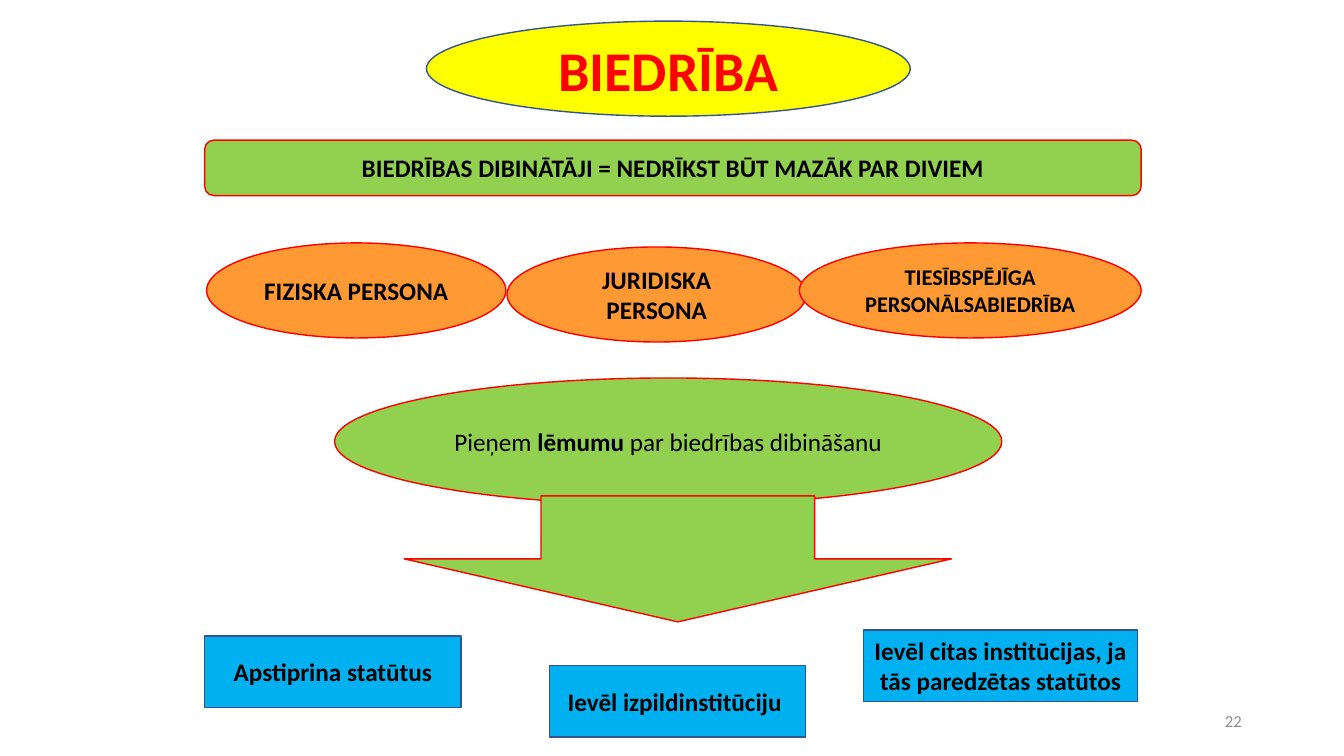
from lxml.etree import SubElement
from pptx import Presentation
from pptx.dml.color import RGBColor
from pptx.enum.shapes import MSO_SHAPE
from pptx.enum.text import MSO_ANCHOR, MSO_AUTO_SIZE, PP_ALIGN
from pptx.oxml.ns import qn
from pptx.util import Pt

YELLOW = RGBColor(0xFF, 0xFF, 0x00)
RED = RGBColor(0xFF, 0x00, 0x00)
GREEN = RGBColor(0x92, 0xD0, 0x50)
ORANGE = RGBColor(0xFF, 0x99, 0x33)
BLUE = RGBColor(0x00, 0xB0, 0xF0)
NAVY = RGBColor(0x32, 0x54, 0x91)
BLACK = RGBColor(0x00, 0x00, 0x00)
GRAY = RGBColor(0x8C, 0x8C, 0x8C)

FONT = "Calibri"
TITLE_BOX = (304.6, 15.1, 345.6, 67.9)
FOUNDERS = [
    ("FIZISKA PERSONA", (147.6, 173.5, 213.8, 67.9), 18),
    ("JURIDISKA PERSONA", (362.2, 176.4, 213.8, 67.9), 18),
    ("TIESĪBSPĒJĪGA PERSONĀLSABIEDRĪBA", (571, 173.5, 244.1, 67.9), 16),
]
NEXT_STEPS = [
    ("Apstiprina statūtus", (146.2, 454.2, 183.2, 51.1)),
    ("Ievēl izpildinstitūciju ", (392.4, 475.4, 183.2, 51.1)),
    ("Ievēl citas institūcijas, ja tās paredzētas statūtos", (617, 450, 195.4, 51.1)),
]


def format_font(font, size, color, bold):
    font.name = FONT
    font.size = Pt(size)
    font.color.rgb = color
    font.bold = bold


def write_centred(shape, parts, size, color=BLACK):
    """Fill the shape with one paragraph made of (text, bold) parts."""
    frame = shape.text_frame
    frame.word_wrap = True
    frame.auto_size = MSO_AUTO_SIZE.NONE
    frame.vertical_anchor = MSO_ANCHOR.MIDDLE
    paragraph = frame.paragraphs[0]
    paragraph.alignment = PP_ALIGN.CENTER
    for text, bold in parts:
        run = paragraph.add_run()
        run.text = text
        format_font(run.font, size, color, bold)


def add_figure(slide, kind, box, fill, line, parts=(), size=18):
    shape = slide.shapes.add_shape(kind, *map(Pt, box))
    shape.shadow.inherit = False
    shape.fill.solid()
    shape.fill.fore_color.rgb = fill
    shape.line.color.rgb = line
    shape.line.width = Pt(1)
    write_centred(shape, parts, size)
    return shape


def add_title(slide, text):
    """Lay the title placeholder over its yellow ellipse."""
    ellipse = add_figure(slide, MSO_SHAPE.OVAL, TITLE_BOX, YELLOW, NAVY)
    title = slide.shapes.title
    title.left, title.top, title.width, title.height = map(Pt, TITLE_BOX)
    write_centred(title, [(text, True)], 40, RED)
    ellipse.element.addnext(title.element)


def add_slide_number(slide, number):
    box = slide.shapes.add_textbox(Pt(678.2), Pt(500.4), Pt(216), Pt(28.8))
    frame = box.text_frame
    frame.word_wrap = True
    frame.vertical_anchor = MSO_ANCHOR.MIDDLE
    paragraph = frame.paragraphs[0]
    paragraph.text = number
    paragraph.alignment = PP_ALIGN.RIGHT
    run = paragraph.runs[0]
    format_font(run.font, 12, GRAY, False)
    field = SubElement(paragraph._p, qn("a:fld"), type="slidenum",
                       id="{B6F15528-21DE-4FAA-801E-634DDDAF4B2B}")
    field.extend(list(run._r))
    paragraph._p.remove(run._r)


def main():
    presentation = Presentation()
    presentation.slide_width = Pt(960)
    presentation.slide_height = Pt(540)
    slide = presentation.slides.add_slide(presentation.slide_layouts[5])
    presentation.slides._sldIdLst.getparent().set("firstSlideNum", "22")

    add_title(slide, "BIEDRĪBA")
    add_figure(slide, MSO_SHAPE.ROUNDED_RECTANGLE, (146.2, 100.1, 668.9, 39.6), GREEN, RED,
               [("BIEDRĪBAS DIBINĀTĀJI = NEDRĪKST BŪT MAZĀK PAR DIVIEM", True)])
    for text, box, size in FOUNDERS:
        add_figure(slide, MSO_SHAPE.OVAL, box, ORANGE, RED, [(text, True)], size)
    add_figure(slide, MSO_SHAPE.OVAL, (239, 270, 476.6, 90.7), GREEN, RED,
               [("Pieņem ", False), ("lēmumu", True), (" par biedrības dibināšanu", False)])
    add_figure(slide, MSO_SHAPE.DOWN_ARROW, (288.7, 354.2, 391, 90), GREEN, RED)
    for text, box in NEXT_STEPS:
        add_figure(slide, MSO_SHAPE.RECTANGLE, box, BLUE, NAVY, [(text, True)])
    add_slide_number(slide, "22")
    presentation.save("out.pptx")


if __name__ == "__main__":
    main()
